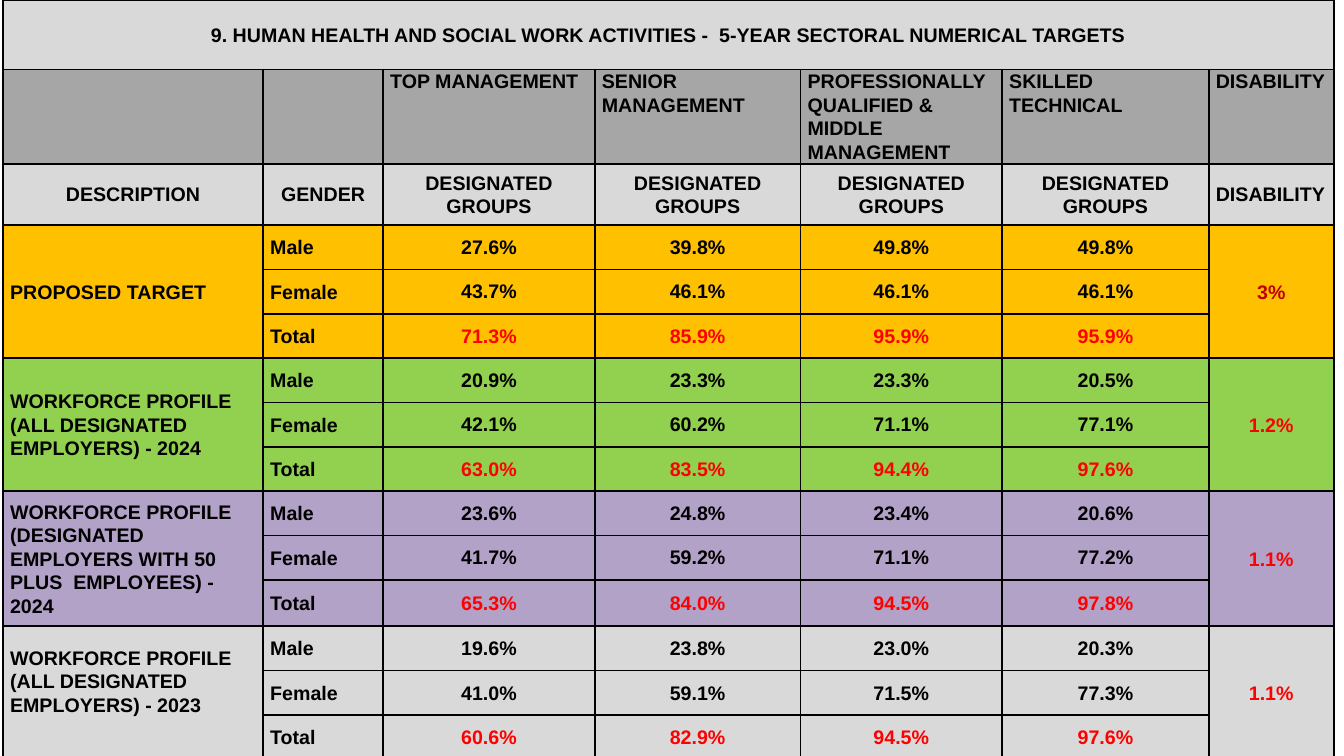
from dataclasses import dataclass

from lxml.etree import SubElement
from pptx import Presentation
from pptx.dml.color import RGBColor
from pptx.enum.text import MSO_ANCHOR, PP_ALIGN
from pptx.oxml.ns import qn
from pptx.util import Inches, Pt


@dataclass(frozen=True)
class Theme:
    font: str = "Arial"
    size: int = 14
    line: float = 1.5
    lead: float = 1.07
    ink: str = "000000"
    red: str = "FF0000"
    dark: str = "C00000"
    pale: str = "D9D9D9"
    grey: str = "A6A6A6"
    gold: str = "FFC000"
    green: str = "92D050"
    mauve: str = "B3A2C7"


class Board:
    def __init__(self, slide, theme):
        self.slide = slide
        self.theme = theme

    def grid(self, left, top, cols, rows):
        frame = self.slide.shapes.add_table(
            len(rows), len(cols), Inches(left), Inches(top),
            Inches(sum(cols)), Inches(sum(rows)))
        table = frame.table
        table.first_row = False
        table.horz_banding = False
        for col, width in zip(table.columns, cols):
            col.width = Inches(width)
        for row, height in zip(table.rows, rows):
            row.height = Inches(height)
        return table

    def edges(self, cell):
        props = cell._tc.get_or_add_tcPr()
        for side in ("lnL", "lnR", "lnT", "lnB"):
            line = SubElement(props, qn(f"a:{side}"), w=str(Pt(self.theme.line)))
            fill = SubElement(line, qn("a:solidFill"))
            SubElement(fill, qn("a:srgbClr"), val=self.theme.ink)

    def cell(self, cell, text, fill, ink=None, align=PP_ALIGN.LEFT,
             anchor=MSO_ANCHOR.MIDDLE, side=0.07, top=0, base=0, lead=None):
        self.edges(cell)
        cell.fill.solid()
        cell.fill.fore_color.rgb = RGBColor.from_string(fill)
        cell.vertical_anchor = anchor
        cell.margin_left = cell.margin_right = Inches(side)
        cell.margin_top = Inches(top)
        cell.margin_bottom = Inches(base)
        cell.text_frame.text = text
        para = cell.text_frame.paragraphs[0]
        para.alignment = align
        para.line_spacing = lead or self.theme.lead
        font = para.font
        for run in para.runs:
            font = run.font
        font.name = self.theme.font
        font.size = Pt(self.theme.size)
        font.bold = True
        font.color.rgb = RGBColor.from_string(ink or self.theme.ink)


THEME = Theme()
COLS = [2.58, 1.19, 2.1, 2.04, 2, 2.05, 1.24]
ROWS = [0.69, 0.9, 0.61] + [0.44] * 8 + [0.46] + [0.44] * 3
TITLE = "9. HUMAN HEALTH AND SOCIAL WORK ACTIVITIES -  5-YEAR SECTORAL NUMERICAL TARGETS"
LEVELS = ["", "", "TOP MANAGEMENT", "SENIOR MANAGEMENT",
          "PROFESSIONALLY QUALIFIED & MIDDLE MANAGEMENT",
          "SKILLED TECHNICAL", "DISABILITY"]
HEADS = ["DESCRIPTION", "GENDER"] + ["DESIGNATED GROUPS"] * 4 + ["DISABILITY"]
GENDERS = ["Male", "Female", "Total"]
TIGHT = {"side": 0.01, "top": 0.01, "lead": 1.0}
LOOSE = {}
BLOCKS = [
    ("PROPOSED TARGET", THEME.gold, "3%", THEME.dark, 0, TIGHT,
     ["27.6% 39.8% 49.8% 49.8%",
      "43.7% 46.1% 46.1% 46.1%",
      "71.3% 85.9% 95.9% 95.9%"]),
    ("WORKFORCE PROFILE (ALL DESIGNATED EMPLOYERS) - 2024",
     THEME.green, "1.2%", THEME.red, 0, TIGHT,
     ["20.9% 23.3% 23.3% 20.5%",
      "42.1% 60.2% 71.1% 77.1%",
      "63.0% 83.5% 94.4% 97.6%"]),
    ("WORKFORCE PROFILE (DESIGNATED EMPLOYERS WITH 50 PLUS  EMPLOYEES) - 2024",
     THEME.mauve, "1.1%", THEME.red, 0, TIGHT,
     ["23.6% 24.8% 23.4% 20.6%",
      "41.7% 59.2% 71.1% 77.2%",
      "65.3% 84.0% 94.5% 97.8%"]),
    ("WORKFORCE PROFILE (ALL DESIGNATED EMPLOYERS) - 2023",
     THEME.pale, "1.1%", THEME.red, 0.23, LOOSE,
     ["19.6% 23.8% 23.0% 20.3%",
      "41.0% 59.1% 71.5% 77.3%",
      "60.6% 82.9% 94.5% 97.6%"]),
]


def main():
    deck = Presentation()
    deck.slide_width = Inches(13.33)
    deck.slide_height = Inches(7.5)
    board = Board(deck.slides.add_slide(deck.slide_layouts[6]), THEME)
    table = board.grid(0.03, 0, COLS, ROWS)
    last = len(COLS) - 1
    mid = PP_ALIGN.CENTER

    for col, (level, head) in enumerate(zip(LEVELS, HEADS)):
        board.cell(table.cell(0, col), "" if col else TITLE, THEME.pale, align=mid)
        board.cell(table.cell(1, col), level, THEME.grey, anchor=MSO_ANCHOR.TOP)
        board.cell(table.cell(2, col), head, THEME.pale,
                   align=PP_ALIGN.LEFT if col == last else mid)
    table.cell(0, 0).merge(table.cell(0, last))

    for block, (label, fill, share, ink, base, pad, lines) in enumerate(BLOCKS):
        first = 3 + block * len(GENDERS)
        for step, (gender, line) in enumerate(zip(GENDERS, lines)):
            row = first + step
            board.cell(table.cell(row, 0), "" if step else label, fill, base=base)
            board.cell(table.cell(row, 1), gender, fill)
            tint = THEME.red if gender == "Total" else THEME.ink
            for col, value in enumerate(line.split(), 2):
                board.cell(table.cell(row, col), value, fill, tint, mid, **pad)
            board.cell(table.cell(row, last), "" if step else share, fill, ink, mid)
        for col in (0, last):
            table.cell(first, col).merge(table.cell(first + 2, col))

    deck.save("out.pptx")


if __name__ == "__main__":
    main()
